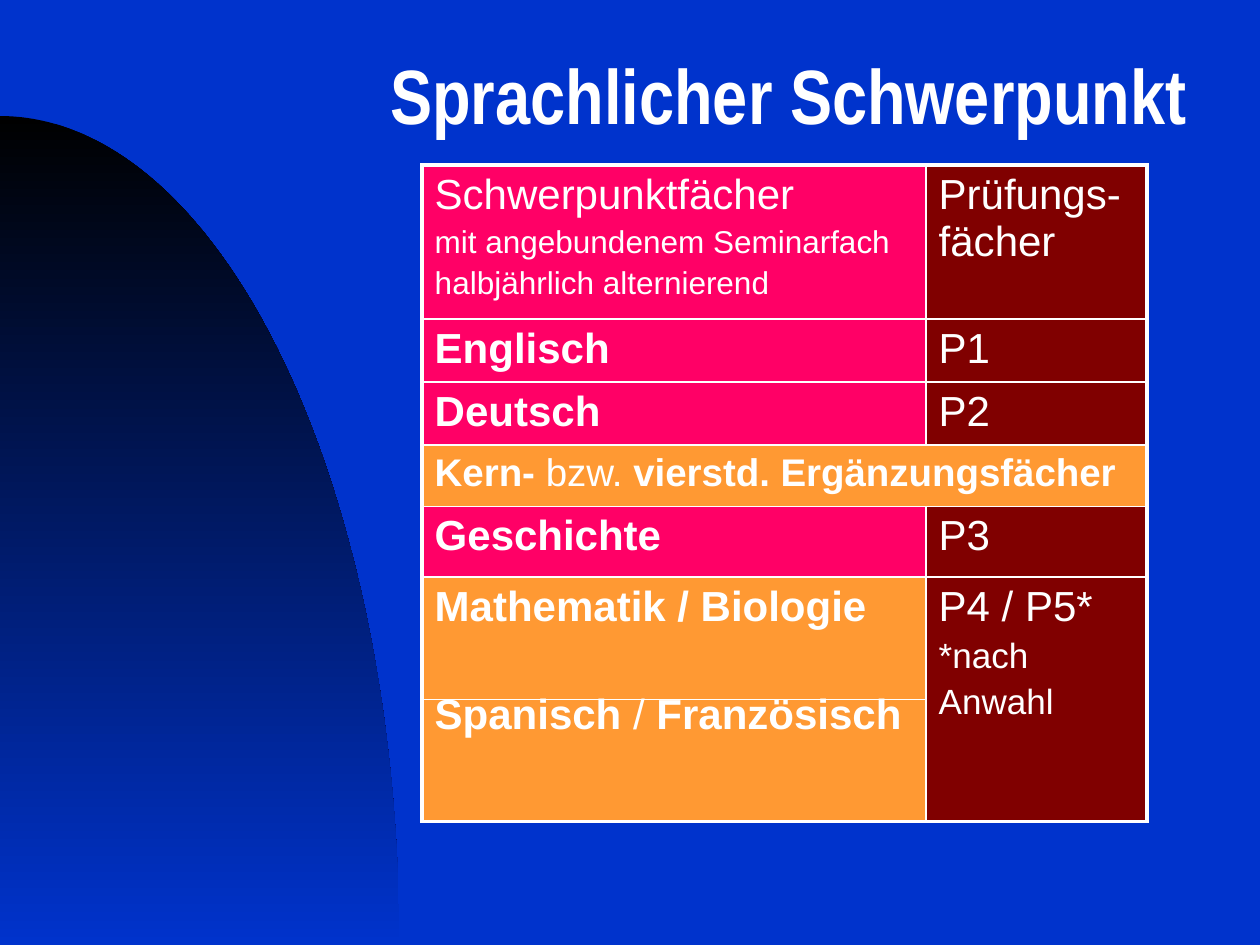
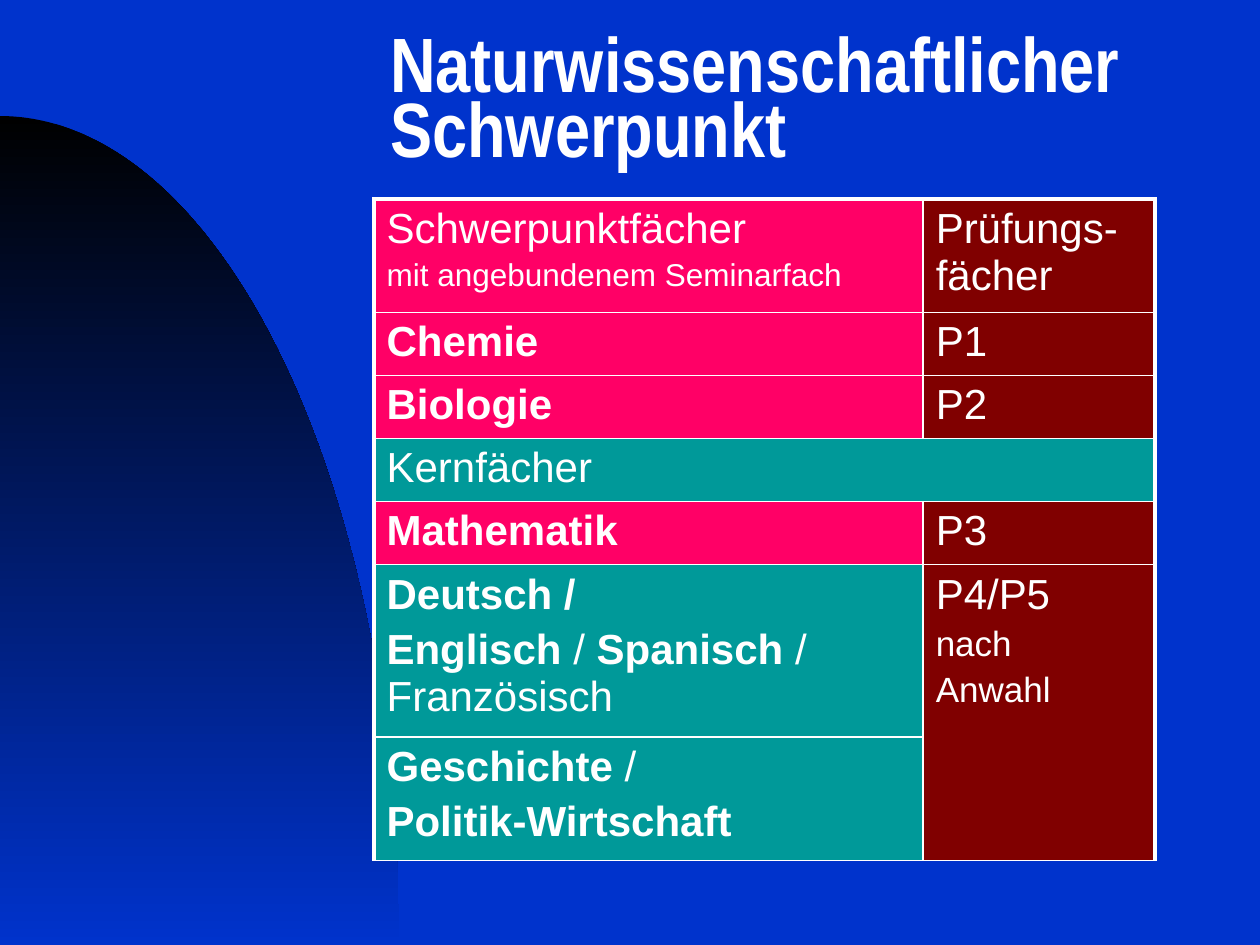
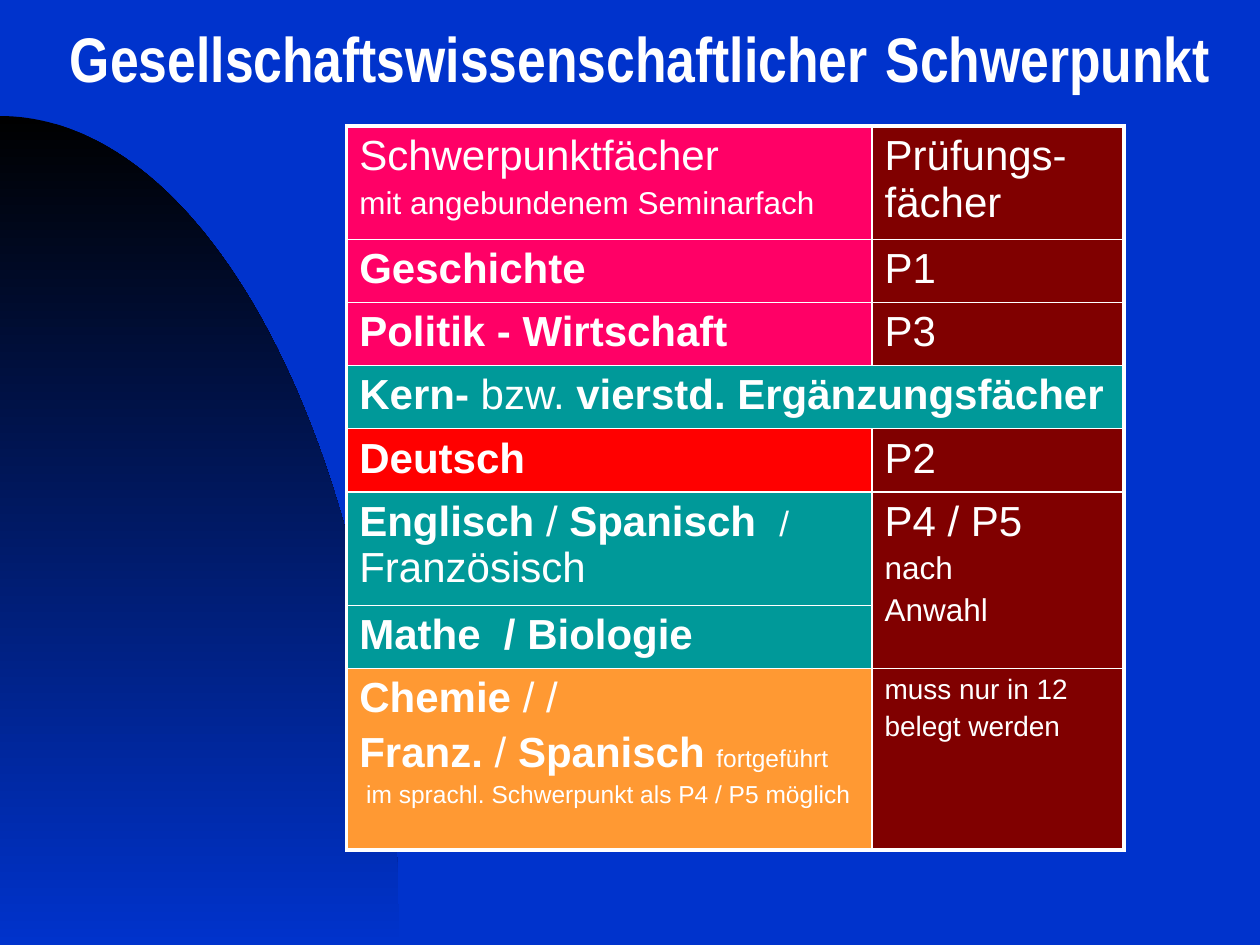
from dataclasses import dataclass
from math import cos, pi, sin

from lxml import etree
from pptx import Presentation
from pptx.dml.color import RGBColor
from pptx.enum.shapes import MSO_CONNECTOR
from pptx.enum.text import MSO_ANCHOR
from pptx.oxml.ns import qn
from pptx.util import Cm, Pt

STRAIGHT = MSO_CONNECTOR.STRAIGHT
MIDDLE = MSO_ANCHOR.MIDDLE


@dataclass(frozen=True)
class Theme:
    blue: str = "0033CC"
    black: str = "000000"
    white: str = "FFFFFF"
    pink: str = "FF0066"
    maroon: str = "800000"
    orange: str = "FF9933"
    teal: str = "009999"
    red: str = "FF0000"
    title_font: str = "Arial Narrow"
    body_font: str = "Arial"
    title: int = 44
    title_small: int = 36
    body: int = 24
    band: int = 22
    choice: int = 20
    note: int = 18
    remark: int = 16
    fine: int = 14
    outer_border: float = 2.25
    inner_border: float = 1
    divider: float = 0.75


THEME = Theme()


@dataclass
class Span:
    text: str
    size: int = THEME.body
    bold: bool = False


@dataclass
class Cell:
    """A table cell; lines holds one list of spans for each paragraph."""
    fill: str
    lines: list
    rows: int = 1
    cols: int = 1
    gap: int = 0  # points above the last paragraph, 0 for the usual spacing


def bold(text, size=THEME.body):
    return Span(text, size, True)


def header_row(*notes):
    subjects = [[Span("Schwerpunktfächer")]]
    subjects += [[Span(note, THEME.note)] for note in notes]
    return [Cell(THEME.pink, subjects),
            Cell(THEME.maroon, [[Span("Prüfungs-fächer")]])]


def subject_row(subject, exam, fill=THEME.pink):
    return [Cell(fill, [[bold(subject)]]), Cell(THEME.maroon, [[Span(exam)]])]


def band_row(fill, *spans):
    return [Cell(fill, [list(spans)], cols=2), None]


def core_band(fill, size):
    return band_row(fill, bold("Kern-", size), Span(" bzw. ", size),
                    bold("vierstd. Ergänzungsfächer", size))


def choice_cell(exams, size, *notes, rows=1):
    lines = [[Span(exams)]] + [[Span(note, size)] for note in notes]
    return Cell(THEME.maroon, lines, rows=rows)


def color(value):
    return RGBColor.from_string(value)


class SlideBuilder:
    def __init__(self, theme):
        self.theme = theme
        self.deck = Presentation()
        self.deck.slide_width, self.deck.slide_height = Cm(25.4), Cm(19.05)
        self.page = None

    def add_page(self):
        self.page = self.deck.slides.add_slide(self.deck.slide_layouts[6])
        background = self.page.background.fill
        background.solid()
        background.fore_color.rgb = color(self.theme.blue)
        self.add_arch()

    def add_arch(self, width=Cm(8.05), top=Cm(2.34), steps=90):
        """Draw a quarter ellipse that fades into the background."""
        bottom = self.deck.slide_height
        height = bottom - top
        angles = [pi / 2 * step / steps for step in range(steps + 1)]
        curve = [(round(width * sin(a)), round(bottom - height * cos(a)))
                 for a in angles]
        builder = self.page.shapes.build_freeform(*curve[0])
        builder.add_line_segments(curve[1:] + [(0, bottom)], close=True)
        arch = builder.convert_to_shape()
        arch.shadow.inherit = False
        arch.line.fill.background()
        arch.fill.gradient()
        arch.fill.gradient_angle = 270
        stops = zip(arch.fill.gradient_stops, (self.theme.black, self.theme.blue))
        for position, (stop, value) in enumerate(stops):
            stop.color.rgb = color(value)
            stop.position = position

    def add_spans(self, para, spans, font_name):
        for span in spans:
            run = para.add_run()
            run.text = span.text
            style = {"name": font_name, "size": Pt(span.size), "bold": span.bold}
            for name, value in style.items():
                setattr(run.font, name, value)
            run.font.color.rgb = color(self.theme.white)

    def add_title(self, spans, left=7.62, top=0.64, width=16.94, height=2.97,
                  indent=0.25):
        box = self.page.shapes.add_textbox(Cm(left), Cm(top), Cm(width), Cm(height))
        frame = box.text_frame
        layout = {"word_wrap": True, "vertical_anchor": MIDDLE,
                  "margin_left": Cm(indent)}
        for name, value in layout.items():
            setattr(frame, name, value)
        para = frame.paragraphs[0]
        para.line_spacing = 0.7
        self.add_spans(para, spans, self.theme.title_font)

    def add_table(self, left, top, widths, heights, rows, bottom_border=None):
        shape = self.page.shapes.add_table(
            len(heights), len(widths), Cm(left), Cm(top),
            Cm(sum(widths)), Cm(sum(heights)))
        table = shape.table
        table.first_row = table.horz_banding = False
        for column, width in zip(table.columns, widths):
            column.width = Cm(width)
        for row, height in zip(table.rows, heights):
            row.height = Cm(height)
        outer, inner = self.theme.outer_border, self.theme.inner_border
        for r, row in enumerate(rows):
            for c, content in enumerate(row):
                if content is None:
                    continue
                cell = table.cell(r, c)
                last_row, last_col = r + content.rows, c + content.cols
                if content.rows * content.cols > 1:
                    cell.merge(table.cell(last_row - 1, last_col - 1))
                self.fill_cell(cell, content)
                self.add_borders(cell, {
                    "L": inner if c else outer,
                    "R": inner if last_col < len(widths) else outer,
                    "T": inner if r else outer,
                    "B": (inner if last_row < len(heights)
                          else bottom_border or outer)})

    def fill_cell(self, cell, content):
        cell.fill.solid()
        cell.fill.fore_color.rgb = color(content.fill)
        frame = cell.text_frame
        for index, spans in enumerate(content.lines):
            para = frame.add_paragraph() if index else frame.paragraphs[0]
            if content.gap and index == len(content.lines) - 1:
                para.space_before = Pt(content.gap)
            else:
                before = etree.SubElement(para._p.get_or_add_pPr(), qn("a:spcBef"))
                etree.SubElement(before, qn("a:spcPct"), val="20000")
            self.add_spans(para, spans, self.theme.body_font)

    def add_borders(self, cell, widths):
        properties = cell._tc.get_or_add_tcPr()
        for index, (side, width) in enumerate(widths.items()):
            line = etree.Element(qn(f"a:ln{side}"), w=str(Pt(width)))
            fill = etree.SubElement(line, qn("a:solidFill"))
            etree.SubElement(fill, qn("a:srgbClr"), val=self.theme.white)
            properties.insert(index, line)

    def add_divider(self, left, right, y):
        line = self.page.shapes.add_connector(
            STRAIGHT, Cm(left), Cm(y), Cm(right), Cm(y))
        line.line.color.rgb = color(self.theme.white)
        line.line.width = Pt(self.theme.divider)
        etree.SubElement(line._element.spPr, qn("a:effectLst"))


def add_languages(builder):
    builder.add_page()
    builder.add_title([bold("Sprachlicher Schwerpunkt", THEME.title)])
    electives = Cell(THEME.orange, [
        [bold("Mathematik / Biologie")],
        [bold("Spanisch"), Span(" / "), bold("Französisch")]], gap=35)
    builder.add_table(
        8.51, 3.33, [10.16, 4.45], [3.1, 1.27, 1.27, 1.24, 1.42, 4.93], [
            header_row("mit angebundenem Seminarfach", "halbjährlich alternierend"),
            subject_row("Englisch", "P1"),
            subject_row("Deutsch", "P2"),
            core_band(THEME.orange, THEME.band),
            subject_row("Geschichte", "P3"),
            [electives, choice_cell("P4 / P5*", THEME.choice, "*nach", "Anwahl")],
        ])
    builder.add_divider(8.53, 18.64, 14.1)


def add_sciences(builder):
    builder.add_page()
    builder.add_title([bold("Naturwissenschaftlicher Schwerpunkt", THEME.title)])
    languages = Cell(THEME.teal, [
        [bold("Deutsch /")],
        [bold("Englisch"), Span(" / "), bold("Spanisch "), Span("/ Französisch")]])
    society = Cell(THEME.teal, [
        [bold("Geschichte "), Span("/")], [bold("Politik-Wirtschaft")]])
    builder.add_table(
        7.54, 4.01, [11.07, 4.67], [2.29] + [1.27] * 4 + [2.51, 2.49], [
            header_row("mit angebundenem Seminarfach"),
            subject_row("Chemie", "P1"),
            subject_row("Biologie", "P2"),
            band_row(THEME.teal, Span("Kernfächer")),
            subject_row("Mathematik", "P3"),
            [languages,
             choice_cell("P4/P5", THEME.choice, "nach", "Anwahl", rows=2)],
            [society, None],
        ], bottom_border=THEME.inner_border)


def add_social_sciences(builder):
    builder.add_page()
    builder.add_title(
        [bold("Gesellschaftswissenschaftlicher", THEME.title_small),
         bold(" ", THEME.title), bold("Schwerpunkt", THEME.title_small)],
        left=0, top=0, width=25.4, height=2.54, indent=1.41)
    languages = Cell(THEME.teal, [
        [bold("Englisch "), Span("/ "), bold("Spanisch  "),
         Span("/  ", THEME.choice), Span("Französisch")]])
    extras = Cell(THEME.orange, [
        [bold("Chemie "), Span("/ /")],
        [bold("Franz."), Span(" / "), bold("Spanisch "),
         Span("fortgeführt", THEME.fine)],
        [Span(" im sprachl. Schwerpunkt als P4 / P5 möglich", THEME.fine)]])
    remark = Cell(THEME.maroon, [
        [Span(text, THEME.remark)] for text in ("muss nur in 12", "belegt werden")])
    builder.add_table(
        6.99, 2.54, [10.59, 5.08], [2.29] + [1.27] * 5 + [1.14, 3.66], [
            header_row("mit angebundenem Seminarfach"),
            subject_row("Geschichte", "P1"),
            subject_row("Politik - Wirtschaft", "P3"),
            core_band(THEME.teal, THEME.body),
            subject_row("Deutsch", "P2", THEME.red),
            [languages,
             choice_cell("P4 / P5", THEME.note, "nach", "Anwahl", rows=2)],
            [Cell(THEME.teal, [[bold("Mathe  / Biologie")]]), None],
            [extras, remark],
        ])


def main():
    builder = SlideBuilder(THEME)
    add_languages(builder)
    add_sciences(builder)
    add_social_sciences(builder)
    builder.deck.save("out.pptx")


if __name__ == "__main__":
    main()
